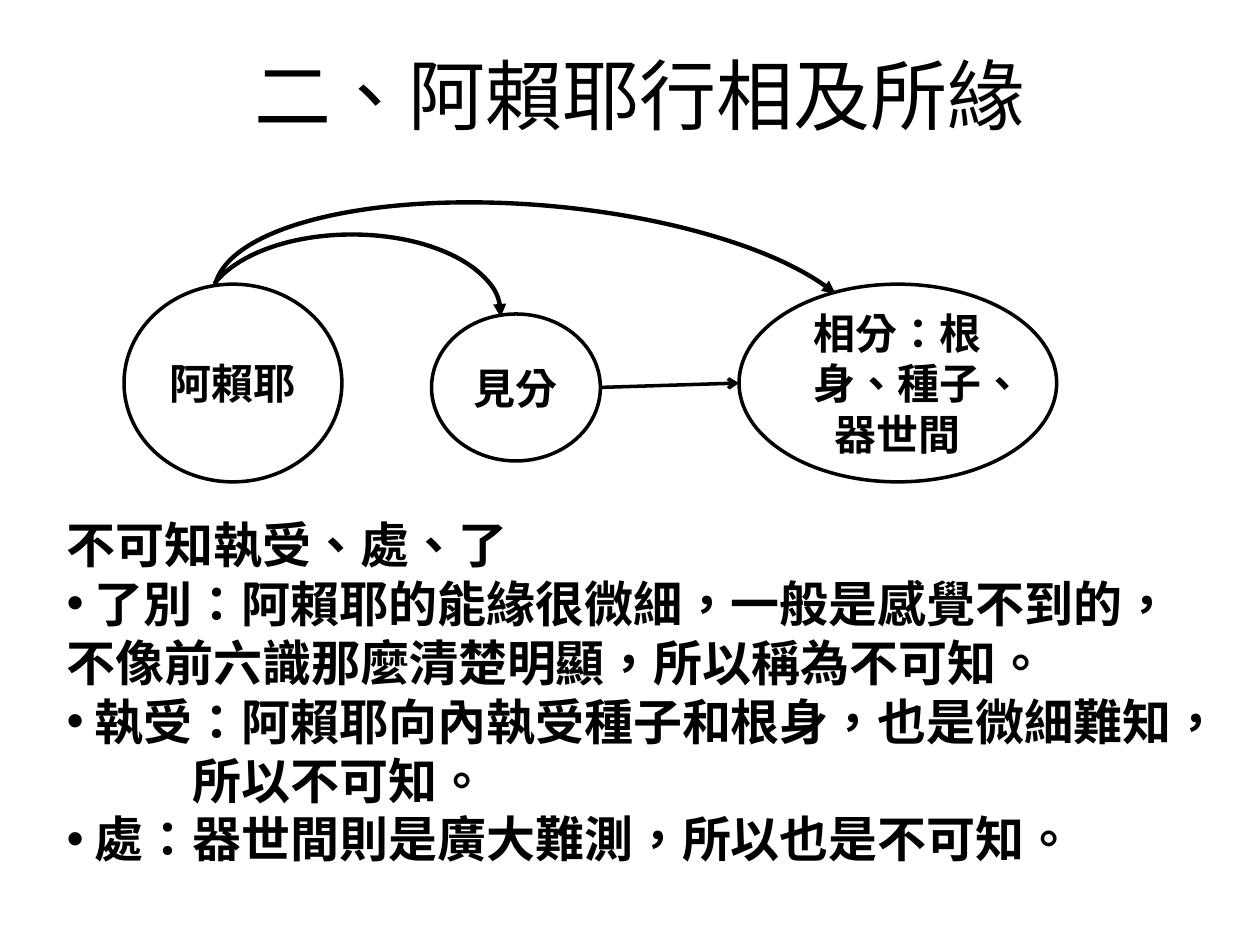
from lxml.etree import SubElement
from pptx import Presentation
from pptx.dml.color import RGBColor
from pptx.enum.lang import MSO_LANGUAGE_ID
from pptx.enum.shapes import MSO_CONNECTOR, MSO_SHAPE
from pptx.enum.text import MSO_ANCHOR, PP_ALIGN
from pptx.oxml.ns import qn
from pptx.util import Pt

BLACK = RGBColor(0, 0, 0)
FONT = "Calibri"
EXPLANATIONS = [
    " 了別：阿賴耶的能緣很微細，一般是感覺不到的，不像前六識那麼清楚明顯，所以稱為不可知。",
    " 執受：阿賴耶向內執受種子和根身，也是微細難知，\t所以不可知。",
    " 處：器世間則是廣大難測，所以也是不可知。",
]


def add_bullet(para):
    properties = para._p.get_or_add_pPr()
    properties.set("marL", "0")
    properties.set("indent", "0")
    SubElement(properties, qn("a:buFont"), typeface="Arial")
    SubElement(properties, qn("a:buChar"), char="•")
    tabs = SubElement(properties, qn("a:tabLst"))
    SubElement(tabs, qn("a:tab"), pos=str(Pt(72)), algn="l")


def write_paragraph(para, text, size, bold=True, align=PP_ALIGN.LEFT, bullet=False):
    para.text = text
    para.alignment = align
    if bullet:
        add_bullet(para)
    para.font.size = Pt(size)
    for span in para.runs:
        span.font.name = FONT
        span.font.size = Pt(size)
        span.font.bold = bold
        span.font.color.rgb = BLACK
        span.font.language_id = MSO_LANGUAGE_ID.TRADITIONAL_CHINESE


def add_text_box(page, left, top, width, height):
    box = page.shapes.add_textbox(Pt(left), Pt(top), Pt(width), Pt(height))
    frame = box.text_frame
    frame.word_wrap = True
    frame.vertical_anchor = MSO_ANCHOR.MIDDLE
    return frame


def add_outline(page, kind, left, top, width, height, weight):
    shape = page.shapes.add_shape(kind, Pt(left), Pt(top), Pt(width), Pt(height))
    shape.shadow.inherit = False
    shape.fill.background()
    shape.line.color.rgb = BLACK
    shape.line.width = Pt(weight)
    return shape


def add_oval(page, text, left, top, width, height):
    oval = add_outline(page, MSO_SHAPE.OVAL, left, top, width, height, 2)
    oval.text_frame.word_wrap = True
    oval.text_frame.vertical_anchor = MSO_ANCHOR.MIDDLE
    write_paragraph(oval.text_frame.paragraphs[0], text, 24, align=PP_ALIGN.CENTER)
    return oval


def add_arrowhead(shape, kind):
    SubElement(shape.line._get_or_add_ln(), qn("a:tailEnd"), type=kind)


def add_curved_arrow(page, left, top, width, height, angles, rotation=0):
    arc = add_outline(page, MSO_SHAPE.ARC, left, top, width, height, 2.5)
    arc.adjustments[0], arc.adjustments[1] = angles
    arc.rotation = rotation
    add_arrowhead(arc, "triangle")


def add_straight_arrow(page, start, end):
    arrow = page.shapes.add_connector(
        MSO_CONNECTOR.STRAIGHT,
        start.left + start.width, start.top + start.height // 2,
        end.left, end.top + end.height // 2,
    )
    arrow.line.color.rgb = BLACK
    arrow.line.width = Pt(2)
    add_arrowhead(arrow, "arrow")
    SubElement(arrow._element.spPr, qn("a:effectLst"))


def main():
    deck = Presentation()
    deck.slide_width, deck.slide_height = Pt(720), Pt(540)
    page = deck.slides.add_slide(deck.slide_layouts[6])

    title = add_text_box(page, 42.5, 20.5, 646.5, 66)
    write_paragraph(title.paragraphs[0], "二、阿賴耶行相及所緣", 44,
                    bold=False, align=PP_ALIGN.CENTER)

    seeing = add_oval(page, "見分", 246.6, 179.4, 96.5, 84)
    add_oval(page, "阿賴耶", 70.9, 162.4, 124.5, 113)
    seen = add_oval(page, "相分：根身、種子、器世間", 422.3, 162.4, 181.5, 113)

    body = add_text_box(page, 31, 281.5, 663, 227)
    write_paragraph(body.paragraphs[0], "不可知執受、處、了", 28)
    for text in EXPLANATIONS:
        write_paragraph(body.add_paragraph(), text, 28, bullet=True)

    add_curved_arrow(page, 116.2, 134, 170, 90.5, (115.45, 0.79))
    add_curved_arrow(page, 121.7, 117.5, 374.5, 130.5, (108.65, 209.9), rotation=5.1)
    add_straight_arrow(page, seeing, seen)

    deck.save("out.pptx")


if __name__ == "__main__":
    main()
